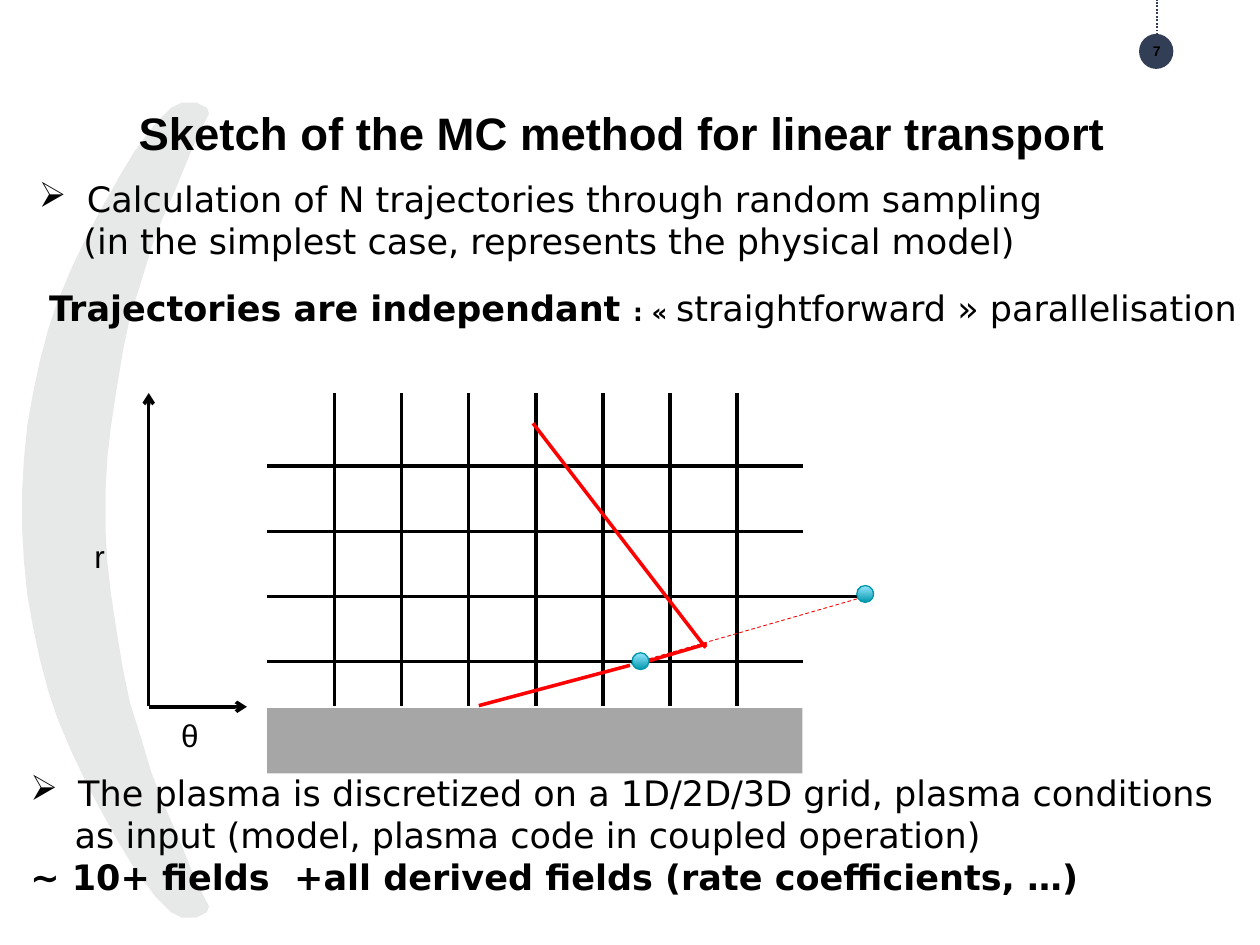
import dataclasses
import typing
import pptx
import pptx.dml.color
import pptx.enum.dml
import pptx.enum.shapes
import pptx.enum.text
import pptx.oxml.ns
import pptx.util
from lxml import etree

Pt = pptx.util.Pt
RGB = pptx.dml.color.RGBColor
Dash = pptx.enum.dml.MSO_LINE
Kind = pptx.enum.shapes.MSO_SHAPE
Anchor = pptx.enum.text.MSO_ANCHOR
Align = pptx.enum.text.PP_ALIGN
qn = pptx.oxml.ns.qn

BLACK = RGB(0x00, 0x00, 0x00)
RED = RGB(0xFF, 0x00, 0x00)
GREY = RGB(0xA6, 0xA6, 0xA6)
PALE = RGB(0xE7, 0xE8, 0xE8)
NAVY = RGB(0x31, 0x3E, 0x56)
TEAL = RGB(0x00, 0x99, 0xAE)
SKY = RGB(0x98, 0xE7, 0xFF)
EDGE = RGB(0x00, 0x96, 0xAA)


@dataclasses.dataclass
class Line:
    x1: float
    y1: float
    x2: float
    y2: float
    color: RGB = BLACK
    width: float = 2
    dash: typing.Any = None
    arrow: bool = False


@dataclasses.dataclass
class Run:
    text: str
    size: float = 20
    bold: bool = False
    font: str = "DejaVu Sans"


@dataclasses.dataclass
class Para:
    runs: list[Run]
    indent: float = 0
    bullet: bool = False


@dataclasses.dataclass
class Box:
    x: float
    y: float
    w: float
    h: float
    paras: list[Para]
    inset: bool = False
    wrap: bool = False
    anchor: typing.Any = Anchor.MIDDLE
    align: typing.Any = Align.LEFT


def draw_line(slide, item: Line) -> None:
    link = slide.shapes.add_connector(
        pptx.enum.shapes.MSO_CONNECTOR.STRAIGHT,
        Pt(item.x1), Pt(item.y1), Pt(item.x2), Pt(item.y2))
    link.line.color.rgb = item.color
    link.line.width = Pt(item.width)
    if item.dash is not None:
        link.line.dash_style = item.dash
    if item.arrow:
        etree.SubElement(link.line._get_or_add_ln(), qn("a:tailEnd"), type="arrow")
    etree.SubElement(link._element.spPr, qn("a:effectLst"))


def draw_shape(slide, kind, x: float, y: float, w: float, h: float, color: RGB):
    shape = slide.shapes.add_shape(kind, Pt(x), Pt(y), Pt(w), Pt(h))
    shape.shadow.inherit = False
    shape.fill.solid()
    shape.fill.fore_color.rgb = color
    shape.line.fill.background()
    return shape


def draw_dot(slide, x: float, y: float) -> None:
    dot = draw_shape(slide, Kind.OVAL, x, y, 9.6, 9.6, TEAL)
    dot.fill.gradient()
    dot.fill.gradient_angle = 90
    for stop, color in zip(dot.fill.gradient_stops, (TEAL, SKY)):
        stop.color.rgb = color
    dot.line.color.rgb = EDGE
    dot.line.width = Pt(0.75)


def draw_box(slide, item: Box) -> None:
    frame = slide.shapes.add_textbox(
        Pt(item.x), Pt(item.y), Pt(item.w), Pt(item.h)).text_frame
    frame.word_wrap = item.wrap
    if not item.wrap:
        frame.auto_size = pptx.enum.text.MSO_AUTO_SIZE.SHAPE_TO_FIT_TEXT
    frame.vertical_anchor = item.anchor
    if not item.inset:
        frame.margin_left = frame.margin_right = 0
        frame.margin_top = frame.margin_bottom = 0
    for i, para in enumerate(item.paras):
        line = frame.add_paragraph() if i else frame.paragraphs[0]
        line.alignment = item.align
        props = line._p.get_or_add_pPr()
        props.set("marL", str(Pt(para.indent)))
        if para.bullet:
            props.set("indent", str(-Pt(para.indent)))
            etree.SubElement(props, qn("a:buChar"), char="➢")
        for part in para.runs:
            run = line.add_run()
            run.text = part.text
            run.font.name = part.font
            run.font.size = Pt(part.size)
            run.font.bold = part.bold
            run.font.color.rgb = BLACK


def draw_arc(slide) -> None:
    # Upper half of the crescent; the lower half mirrors it
    outer = [(119, 65), (118, 62), (112, 59), (104, 59), (98, 62), (89, 71),
             (77, 87), (68, 102), (58, 120), (50, 135), (41, 154), (33, 173),
             (28, 188), (23, 207), (19, 226), (16, 243), (14, 263), (13, 281)]
    inner = [(60, 279), (61, 261), (63, 244), (66, 224), (70, 200), (74, 181),
             (80, 162), (86, 142), (92, 126), (100, 108), (109, 86), (115, 73)]

    def flip(half):
        return [(x, 583 - y) for x, y in reversed(half)]

    dots = [(Pt(x), Pt(y)) for x, y in outer + flip(outer) + flip(inner) + inner]
    pen = slide.shapes.build_freeform(*dots[0])
    pen.add_line_segments(dots[1:], close=True)
    arc = pen.convert_to_shape()
    arc.shadow.inherit = False
    arc.fill.solid()
    arc.fill.fore_color.rgb = PALE
    arc.line.color.rgb = PALE
    arc.line.width = Pt(0.75)


def main() -> None:
    deck = pptx.Presentation()
    deck.slide_width, deck.slide_height = Pt(720), Pt(540)
    slide = deck.slides.add_slide(deck.slide_layouts[6])

    # Backdrop and page badge
    draw_arc(slide)
    draw_shape(slide, Kind.OVAL, 650.9, 19.4, 19.6, 20, NAVY)
    draw_line(slide, Line(661, 20, 661, 0, NAVY, 1, Dash.ROUND_DOT))

    # Grid over the wall
    for i in range(4):
        y = 266.4 + 37.2 * i
        draw_line(slide, Line(152.6, y, 499 if i == 2 else 458.6, y))
    draw_shape(slide, Kind.RECTANGLE, 152.6, 404.6, 306, 37.4, GREY)
    for i in range(7):
        x = 191.2 + 38.33 * i
        draw_line(slide, Line(x, 224.6, x, 403.2))

    # Trajectory
    for item in (Line(273.6, 403.2, 360, 380.2, RED),
                 Line(403.2, 370.1, 304.6, 241.9, RED),
                 Line(360.7, 379.4, 495.4, 340.6, RED, 0.5, Dash.DASH),
                 Line(367.2, 378.7, 403.9, 367.9, RED)):
        draw_line(slide, item)
    draw_dot(slide, 361.2, 373)
    draw_dot(slide, 489.6, 334.6)

    # Axes
    draw_line(slide, Line(85, 403.6, 85, 224.6, arrow=True))
    draw_line(slide, Line(85, 403.9, 141.1, 403.9, arrow=True))

    # Texts
    for item in (
        Box(79.2, 60, 648 - 16, 50, [Para([Run(
            "Sketch of the MC method for linear transport", 26, True, "Arial")])],
            wrap=True, anchor=Anchor.TOP),
        Box(643, 23.8, 36, 10.8, [Para([Run("7", 8, True, "Arial")])],
            inset=True, wrap=True, align=Align.CENTER),
        Box(46.8, 303.1, 20.9, 28.8, [Para([Run("r", 18, font="Arial")])],
            inset=True, anchor=Anchor.TOP),
        Box(96.5, 405.4, 24.5, 28.8, [Para([Run("θ", 18, font="Arial")])],
            inset=True, anchor=Anchor.TOP),
        Box(22.3, 101.5, 587.5, 48.2, [
            Para([Run("Calculation of N trajectories through random sampling")],
                 27.4, True),
            Para([Run("(in the simplest case, represents the physical model)")],
                 25.4)]),
        Box(17.3, 440.6, 687.6, 72.7, [
            Para([Run("The plasma is discretized on a 1D/2D/3D grid, "
                      "plasma conditions")], 27.4, True),
            Para([Run("as input (model, plasma code in coupled operation)")], 25.4),
            Para([Run("~ 10+ fields  +all derived fields "
                      "(rate coefficients, …)", bold=True)])]),
        Box(28.1, 163.4, 692.6, 24.5, [Para([
            Run("Trajectories are independant ", bold=True),
            Run(": « ", 14, True),
            Run("straightforward » parallelisation")])]),
    ):
        draw_box(slide, item)

    deck.save("out.pptx")


if __name__ == "__main__":
    main()
